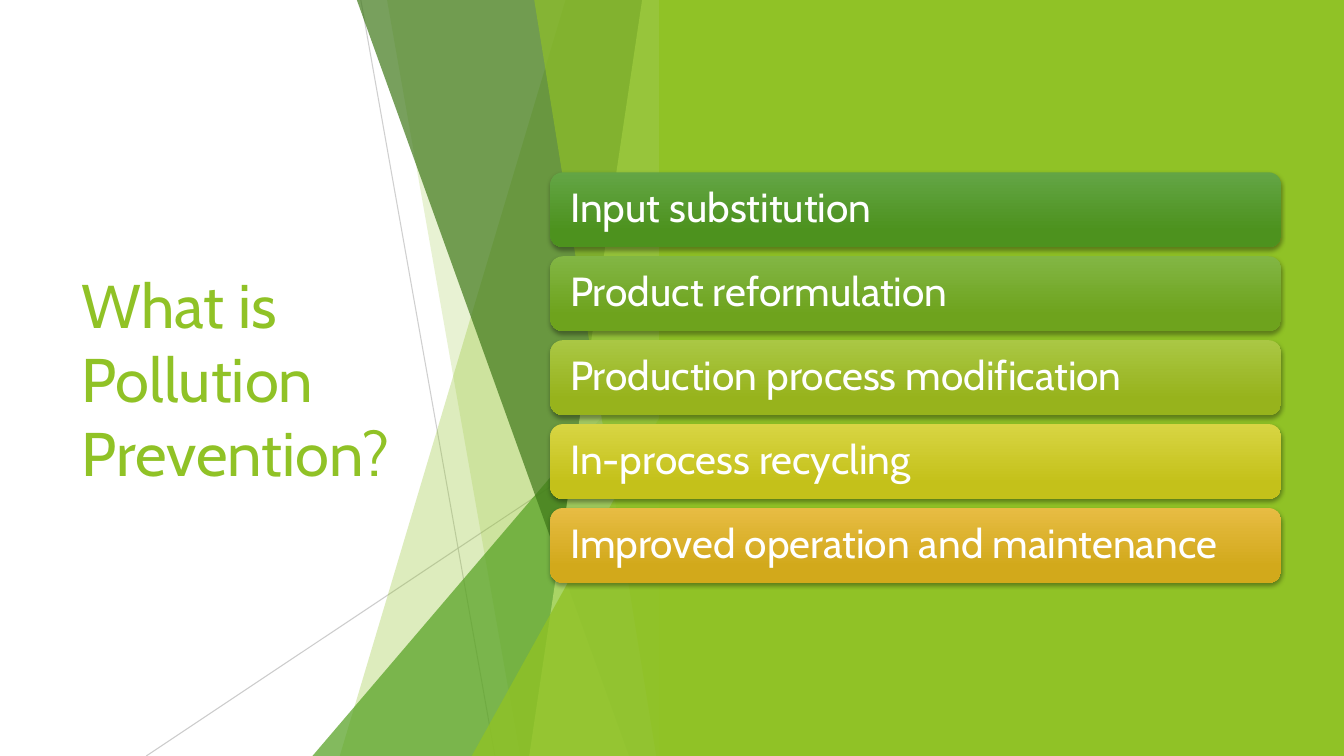
from lxml import etree
from pptx import Presentation
from pptx.dml.color import RGBColor
from pptx.enum.shapes import MSO_CONNECTOR, MSO_SHAPE
from pptx.enum.text import MSO_ANCHOR, PP_ALIGN
from pptx.oxml.ns import qn
from pptx.util import Inches, Pt

STRAIGHT = MSO_CONNECTOR.STRAIGHT
TRIANGLE = MSO_SHAPE.ISOSCELES_TRIANGLE
RECTANGLE = MSO_SHAPE.RECTANGLE
ROUNDED = MSO_SHAPE.ROUNDED_RECTANGLE
MIDDLE = MSO_ANCHOR.MIDDLE
LEFT = PP_ALIGN.LEFT

THEME = {
    "font": "Cabin",
    "title_size": Pt(44),
    "bar_size": Pt(29),
    "lime": "90C226",
    "leaf": "54A021",
    "forest": "3F7819",
    "pale": "C0E474",
    "hairline": "BFBFBF",
    "white": "FFFFFF",
    "shadow": "000000",
}

deck = Presentation()
deck.slide_width, deck.slide_height = Inches(13.333), Inches(7.5)
page = deck.slides.add_slide(deck.slide_layouts[6])
column, row = deck.slide_width / 100, deck.slide_height / 100


def place(*lengths):
    return [round(length * (column, row)[i % 2]) for i, length in enumerate(lengths)]


def set_opacity(shape, percent):
    color = next(shape.element.spPr.iter(qn("a:srgbClr")))
    etree.SubElement(color, qn("a:alpha")).set("val", str(percent * 1000))


title = page.shapes.add_textbox(*place(5.33, 20.13, 29.1, 59.73))
title.text_frame.word_wrap = True
title.text_frame.vertical_anchor = MIDDLE
title.text_frame.text = "What is Pollution Prevention?"
title_font = title.text_frame.paragraphs[0].runs[0].font
title_font.name, title_font.size = THEME["font"], THEME["title_size"]
title_font.color.rgb = RGBColor.from_string(THEME["lime"])

HAIRLINES = [((26.85, 0, 36.83, 100), 75), ((49.95, 53.73, 10.88, 100), 80)]
for ends, opacity in HAIRLINES:
    hairline = page.shapes.add_connector(STRAIGHT, *place(*ends))
    hairline.line.width = Pt(0.75)
    hairline.line.color.rgb = RGBColor.from_string(THEME["hairline"])
    set_opacity(hairline, opacity)
    etree.SubElement(hairline.element.spPr, qn("a:effectLst"))

SEAM = 49.95
FACETS = [
    ("ribbon", 42.08, 25.28, "lime", 30),
    ("ribbon", 28.8, 38.7, "lime", 20),
    ("wedge", 23.25, 44.4, "leaf", 72),
    ("ribbon", 26.55, 46.8, "forest", 70),
    ("ribbon", 47.78, 39.38, "pale", 70),
    ("ribbon", 39.75, 48.83, "lime", 65),
    ("wedge", 35.1, 52.4, "lime", 80),
]
for kind, first, second, color, opacity in FACETS:
    if kind == "ribbon":
        outline = page.shapes.build_freeform(*place(first, 0))
        corners = [(SEAM, 0), (SEAM, 100), (second, 100)]
        outline.add_line_segments([place(*corner) for corner in corners])
        facet = outline.convert_to_shape()
    else:
        facet = page.shapes.add_shape(
            TRIANGLE, *place(first, second, SEAM - first, 100 - second))
        facet.adjustments[0] = 1
    facet.shadow.inherit = False
    facet.line.fill.background()
    facet.fill.solid()
    facet.fill.fore_color.rgb = RGBColor.from_string(THEME[color])
    set_opacity(facet, opacity)

panel = page.shapes.add_shape(RECTANGLE, *place(49.05, 0, 50.95, 100))
panel.shadow.inherit = False
panel.line.fill.background()
panel.fill.solid()
panel.fill.fore_color.rgb = RGBColor.from_string(THEME["lime"])

BARS = [
    ("Input substitution", "63A545", "4D921E"),
    ("Product reformulation", "82B644", "6EA31D"),
    ("Production process modification", "AAC744", "97B31C"),
    ("In-process recycling", "D8D543", "C4C11A"),
    ("Improved operation and maintenance", "E7BC43", "D2A91B"),
]
for index, (label, light, dark) in enumerate(BARS):
    bar = page.shapes.add_shape(
        ROUNDED, *place(40.95, 22.8 + 11.1 * index, 54.38, 9.9))
    bar.line.fill.background()
    bar.fill.gradient()
    bar.fill.gradient_angle = 270
    for stop, color, position in zip(bar.fill.gradient_stops, (light, dark), (0, 0.78)):
        stop.color.rgb = RGBColor.from_string(color)
        stop.position = position
    bar.shadow.inherit = False
    effects = bar.element.spPr.find(qn("a:effectLst"))
    shadow = etree.SubElement(
        effects, qn("a:outerShdw"), blurRad=str(Pt(3)), dist=str(Pt(2)),
        dir="5400000", rotWithShape="0")
    shade = etree.SubElement(shadow, qn("a:srgbClr"), val=THEME["shadow"])
    etree.SubElement(shade, qn("a:alpha"), val="35000")

    frame = bar.text_frame
    frame.word_wrap = True
    frame.vertical_anchor = MIDDLE
    frame.margin_left = frame.margin_right = round(1.2 * column)
    frame.text = label
    para = frame.paragraphs[0]
    para.alignment = LEFT
    para.line_spacing = 0.9
    font = para.runs[0].font
    font.name, font.size = THEME["font"], THEME["bar_size"]
    font.color.rgb = RGBColor.from_string(THEME["white"])

deck.save("out.pptx")
